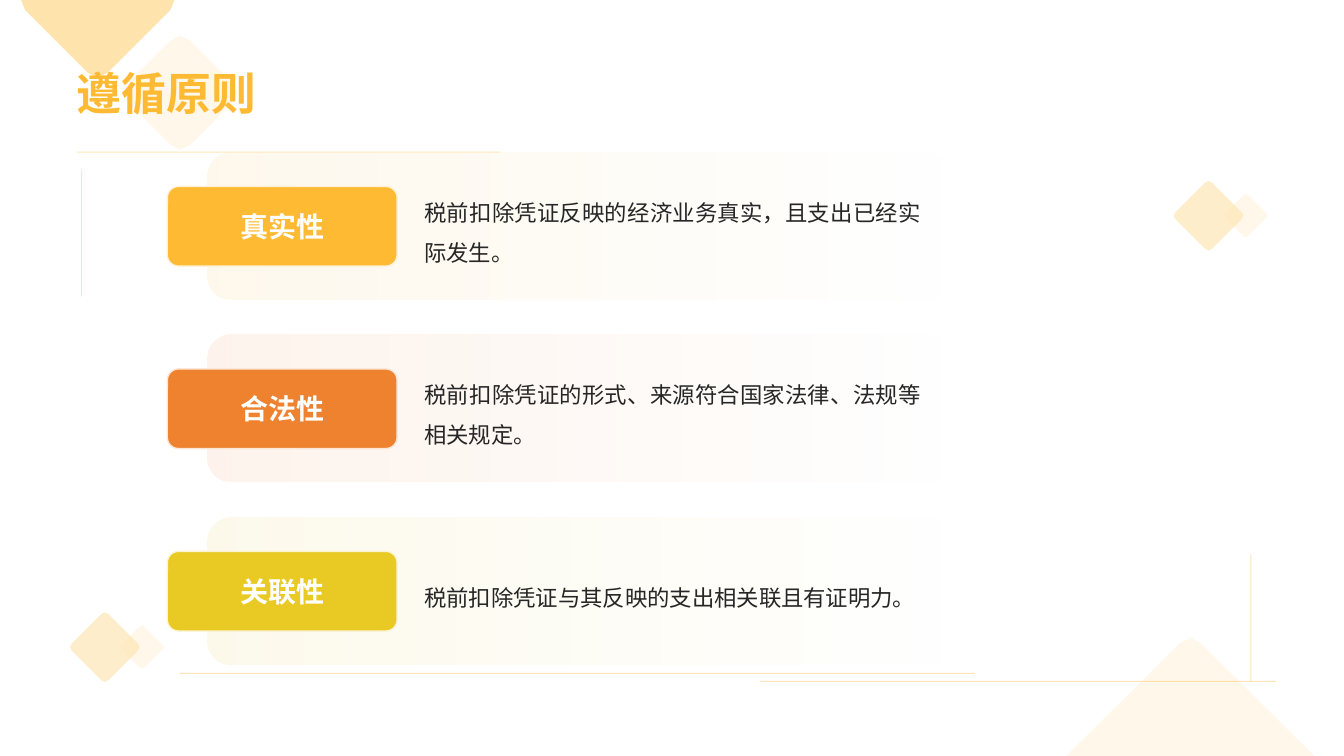
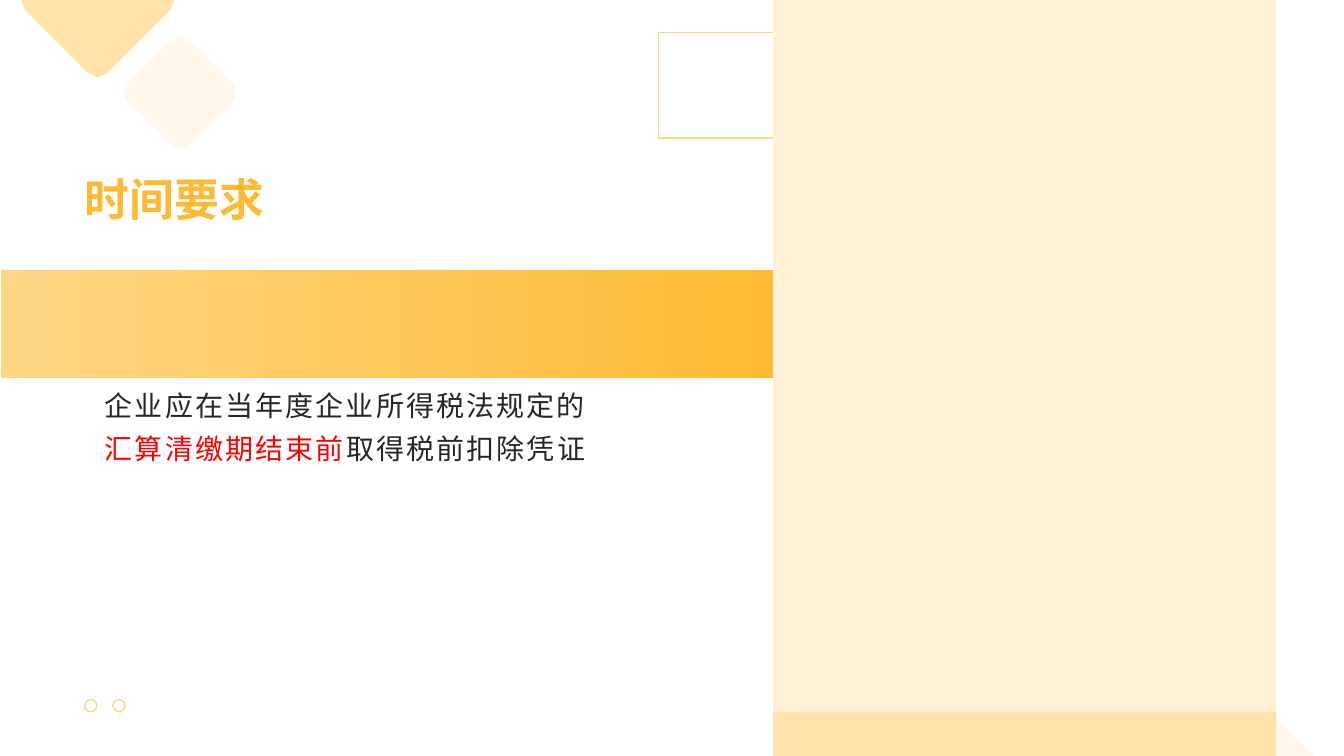
from dataclasses import dataclass
from math import dist, sqrt

from lxml.etree import SubElement
from pptx import Presentation
from pptx.dml.color import RGBColor as Rgb
from pptx.enum.shapes import MSO_CONNECTOR as Connector, MSO_SHAPE as Shape
from pptx.enum.text import MSO_ANCHOR as Anchor, PP_ALIGN as Align
from pptx.oxml.ns import qn
from pptx.util import Inches, Pt


@dataclass(frozen=True)
class Theme:
    """Colours, font and type sizes shared by the slides."""
    font: str = "Noto Sans CJK SC"
    amber: str = "FEBA32"
    soft_amber: str = "FED684"
    sand: str = "FFE3AD"
    cream: str = "FFF1D6"
    orange: str = "EE822F"
    pale_orange: str = "FCE6D5"
    yellow: str = "E9CA25"
    pale_yellow: str = "FBF4D3"
    ink: str = "262626"
    alert: str = "FF0000"
    white: str = "FFFFFF"
    title_size: float = 32
    label_size: float = 20
    body_size: float = 16


THEME = Theme()
WIDTH, HEIGHT = 40 / 3, 7.5
BAND_TOP, BAND_HEIGHT, BAND_PITCH = 1.51, 1.46, 1.81
BADGE_DROP, BADGE_HEIGHT = 0.34, 0.79

PRINCIPLES = [
    ("真实性", "税前扣除凭证反映的经济业务真实，且支出已经实际发生。", THEME.amber, THEME.cream),
    ("合法性", "税前扣除凭证的形式、来源符合国家法律、法规等相关规定。", THEME.orange, THEME.pale_orange),
    ("关联性", "税前扣除凭证与其反映的支出相关联且有证明力。", THEME.yellow, THEME.pale_yellow),
]
RULES = [
    (7.54, 6.76, 12.66, 6.76),
    (1.78, 6.68, 9.67, 6.68),
    (0.76, 1.51, 4.96, 1.51),
    (0.81, 1.68, 0.81, 2.94),
    (12.41, 5.5, 12.41, 6.76),
]


def set_opacity(drawing, *percents):
    """Give each colour of a drawing, in order, its opacity in percent."""
    colours = drawing.element.iter(qn("a:srgbClr"))
    for colour, percent in zip(colours, percents):
        SubElement(colour, qn("a:alpha")).set("val", str(percent * 1000))


def add_box(slide, kind, box, fill=None, line=None, corner=None):
    """Add a preset shape with an optional solid fill, outline and corner."""
    shape = slide.shapes.add_shape(kind, *map(Inches, box))
    shape.shadow.inherit = False
    if corner is not None:
        shape.adjustments[0] = corner
    if fill:
        shape.fill.solid()
        shape.fill.fore_color.rgb = Rgb.from_string(fill)
    else:
        shape.fill.background()
    if line:
        shape.line.color.rgb = Rgb.from_string(line)
        shape.line.width = Pt(1)
    else:
        shape.line.fill.background()
    return shape


def shade(shape, start, end):
    """Fill a shape with a gradient running from left to right."""
    shape.fill.gradient()
    shape.fill.gradient_angle = 0
    for stop, colour in zip(shape.fill.gradient_stops, (start, end)):
        stop.color.rgb = Rgb.from_string(colour)


def add_rule(slide, ends):
    """Add a thin translucent line."""
    rule = slide.shapes.add_connector(Connector.STRAIGHT, *map(Inches, ends))
    rule.line.color.rgb = Rgb.from_string(THEME.amber)
    rule.line.width = Pt(0.75)
    set_opacity(rule, 35)
    SubElement(rule.element.spPr, qn("a:effectLst"))


def round_corner(before, corner, after, trim):
    """Return the three points that blunt a sharp corner."""
    if not trim:
        return [corner]
    start, end = (
        tuple(c + (n - c) * trim / dist(corner, near) for c, n in zip(corner, near))
        for near in (before, after)
    )
    middle = tuple((s + 2 * c + e) / 4 for s, c, e in zip(start, corner, end))
    return [start, middle, end]


def add_outline(slide, corners, fill, opacity):
    """Add a translucent polygon from corners of x, y and trim length."""
    spots = [(x, y) for x, y, _ in corners]
    points = []
    for index, (_, _, trim) in enumerate(corners):
        following = spots[(index + 1) % len(spots)]
        points += round_corner(spots[index - 1], spots[index], following, trim)
    points = [tuple(map(Inches, point)) for point in points]
    builder = slide.shapes.build_freeform(*points[0])
    builder.add_line_segments(points[1:])
    outline = builder.convert_to_shape()
    outline.shadow.inherit = False
    outline.fill.solid()
    outline.fill.fore_color.rgb = Rgb.from_string(fill)
    set_opacity(outline, opacity)
    outline.line.fill.background()


def add_diamond(slide, x, y, size, trim, fill, opacity):
    """Add a blunted diamond centred on a point."""
    reach = size / 2 + trim / sqrt(8)
    corners = [(x - reach, y, trim), (x, y - reach, trim),
               (x + reach, y, trim), (x, y + reach, trim)]
    add_outline(slide, corners, fill, opacity)


def add_diamond_pair(slide, x, y):
    """Add a small diamond with a paler one to its right."""
    add_diamond(slide, x, y, 0.69, 0.05, THEME.amber, 25)
    add_diamond(slide, x + 0.37, y, 0.43, 0.03, THEME.sand, 26)


def write(shape, paragraphs, size, anchor=Anchor.MIDDLE, align=Align.LEFT,
          bold=False, leading=1.0, tracking=0, side_inset=0):
    """Write paragraphs made of text and colour runs into a shape."""
    frame = shape.text_frame
    frame.word_wrap = True
    frame.vertical_anchor = anchor
    frame.margin_top = frame.margin_bottom = 0
    frame.margin_left = frame.margin_right = Inches(side_inset)
    for index, runs in enumerate(paragraphs):
        paragraph = frame.add_paragraph() if index else frame.paragraphs[0]
        paragraph.alignment = align
        paragraph.line_spacing = leading
        for text, colour in runs:
            run = paragraph.add_run()
            run.text = text
            run.font.size = Pt(size)
            run.font.bold = bold
            run.font.name = THEME.font
            run.font.color.rgb = Rgb.from_string(colour)
            properties = run.font._element
            SubElement(properties, qn("a:ea")).set("typeface", THEME.font)
            if tracking:
                properties.set("spc", str(int(tracking * 100)))


def add_text(slide, box, paragraphs, size, **style):
    """Add a text box."""
    write(slide.shapes.add_textbox(*map(Inches, box)), paragraphs, size, **style)


def add_title(slide, box, text):
    """Add a slide title."""
    add_text(slide, box, [[(text, THEME.amber)]], THEME.title_size,
             anchor=Anchor.BOTTOM, bold=True)


def new_slide(deck):
    """Add a blank slide with the shared corner diamonds."""
    slide = deck.slides.add_slide(deck.slide_layouts[6])
    top_corner = [(0.21, 0, 0), (0.25, 0.1, 0), (0.97, 0.82, 0.14),
                  (1.69, 0.1, 0), (1.73, 0, 0)]
    bottom_corner = [(10.58, HEIGHT, 0), (11.81, 6.28, 0.14), (13.04, HEIGHT, 0)]
    add_outline(slide, top_corner, THEME.amber, 40)
    add_outline(slide, bottom_corner, THEME.amber, 10)
    add_diamond(slide, 1.79, 0.92, 1.13, 0.14, THEME.amber, 10)
    return slide


def add_principle(slide, top, label, detail, colour, tint):
    """Add a fading band with its label badge and description."""
    band = add_box(slide, Shape.ROUNDED_RECTANGLE, (2.06, top, 7.36, BAND_HEIGHT),
                   corner=0.153)
    shade(band, tint, tint)
    set_opacity(band, 44, 0)
    badge = add_box(slide, Shape.ROUNDED_RECTANGLE,
                    (1.66, top + BADGE_DROP, 2.28, BADGE_HEIGHT), colour, tint, 0.141)
    write(badge, [[(label, THEME.white)]], THEME.label_size,
          align=Align.CENTER, bold=True)
    add_text(slide, (4.21, top, 4.93, BAND_HEIGHT), [[(detail, THEME.ink)]],
             THEME.body_size, align=Align.JUSTIFY, leading=1.5)


def build_principles(deck):
    """Build the slide of the three principles."""
    slide = new_slide(deck)
    add_title(slide, (0.76, 0.39, 11.81, 0.79), "遵循原则")
    for ends in RULES:
        add_rule(slide, ends)
    add_diamond_pair(slide, 1.04, 6.42)
    add_diamond_pair(slide, 11.99, 2.14)
    for index, principle in enumerate(PRINCIPLES):
        add_principle(slide, BAND_TOP + index * BAND_PITCH, *principle)


def build_deadline(deck):
    """Build the slide of the time requirement."""
    slide = new_slide(deck)
    add_box(slide, Shape.RECTANGLE, (6.53, 0.32, 5.92, 1.05), line=THEME.soft_amber)
    ribbon = add_box(slide, Shape.RECTANGLE, (0.01, 2.68, 7.67, 1.07))
    shade(ribbon, THEME.soft_amber, THEME.amber)
    add_title(slide, (0.84, 1.45, 6.16, 0.79), "时间要求")
    add_box(slide, Shape.RECTANGLE, (7.67, 0, 4.99, HEIGHT), THEME.cream)
    add_box(slide, Shape.RECTANGLE, (7.67, 7.06, 4.99, 0.44), THEME.sand)
    requirement = [
        [("企业应在当年度企业所得税法规定的", THEME.ink)],
        [("汇算清缴期结束前", THEME.alert), ("取得税前扣除凭证", THEME.ink)],
    ]
    add_text(slide, (0.96, 3.75, 6.16, 1.59), requirement, THEME.label_size,
             anchor=Anchor.TOP, leading=1.3, tracking=1.5, side_inset=0.08)
    for left in (0.84, 1.12):
        add_box(slide, Shape.OVAL, (left, 6.94, 0.12, 0.12), line=THEME.soft_amber)


def main():
    """Build and save the presentation."""
    deck = Presentation()
    deck.slide_width, deck.slide_height = Inches(WIDTH), Inches(HEIGHT)
    build_principles(deck)
    build_deadline(deck)
    deck.save("out.pptx")


if __name__ == "__main__":
    main()
